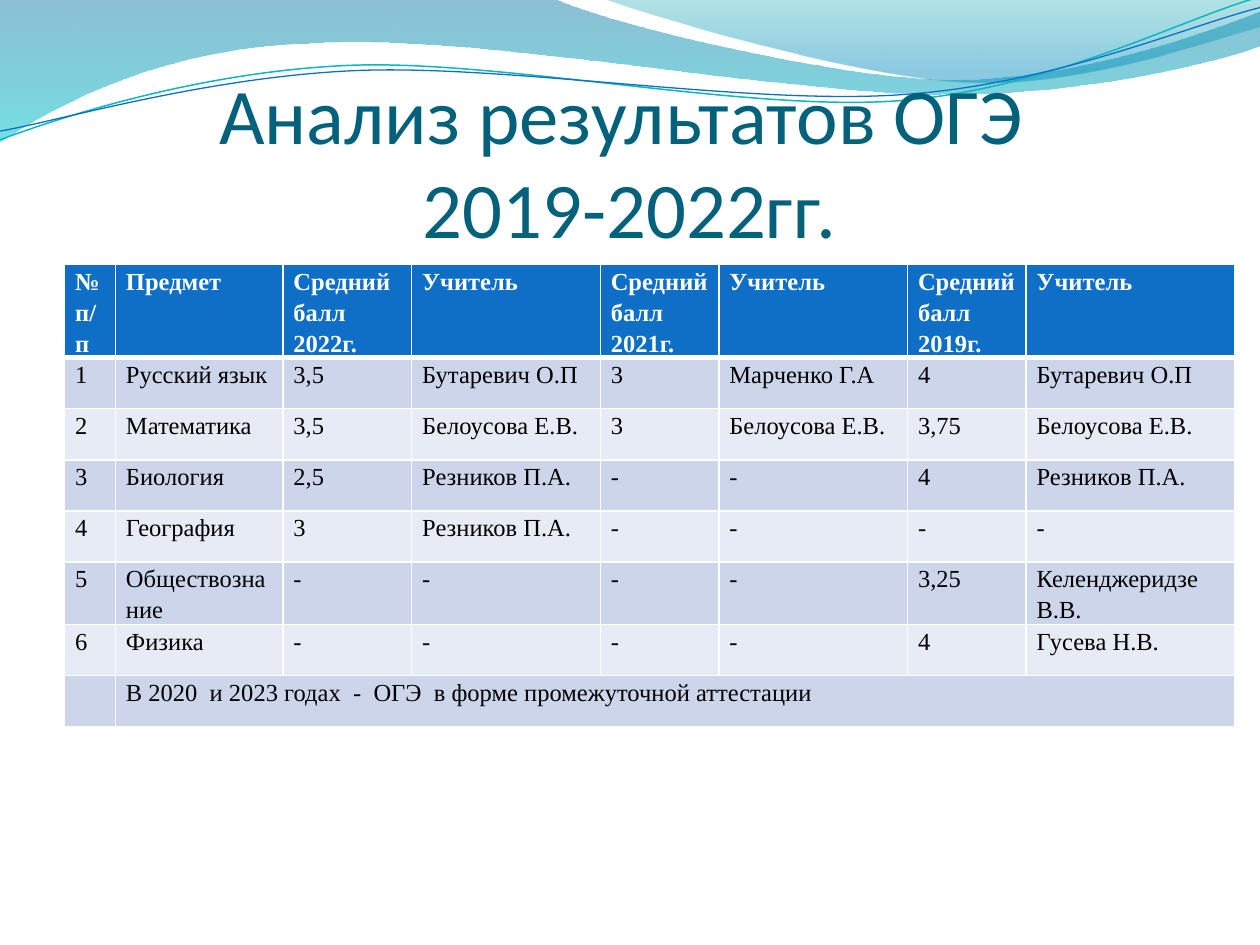
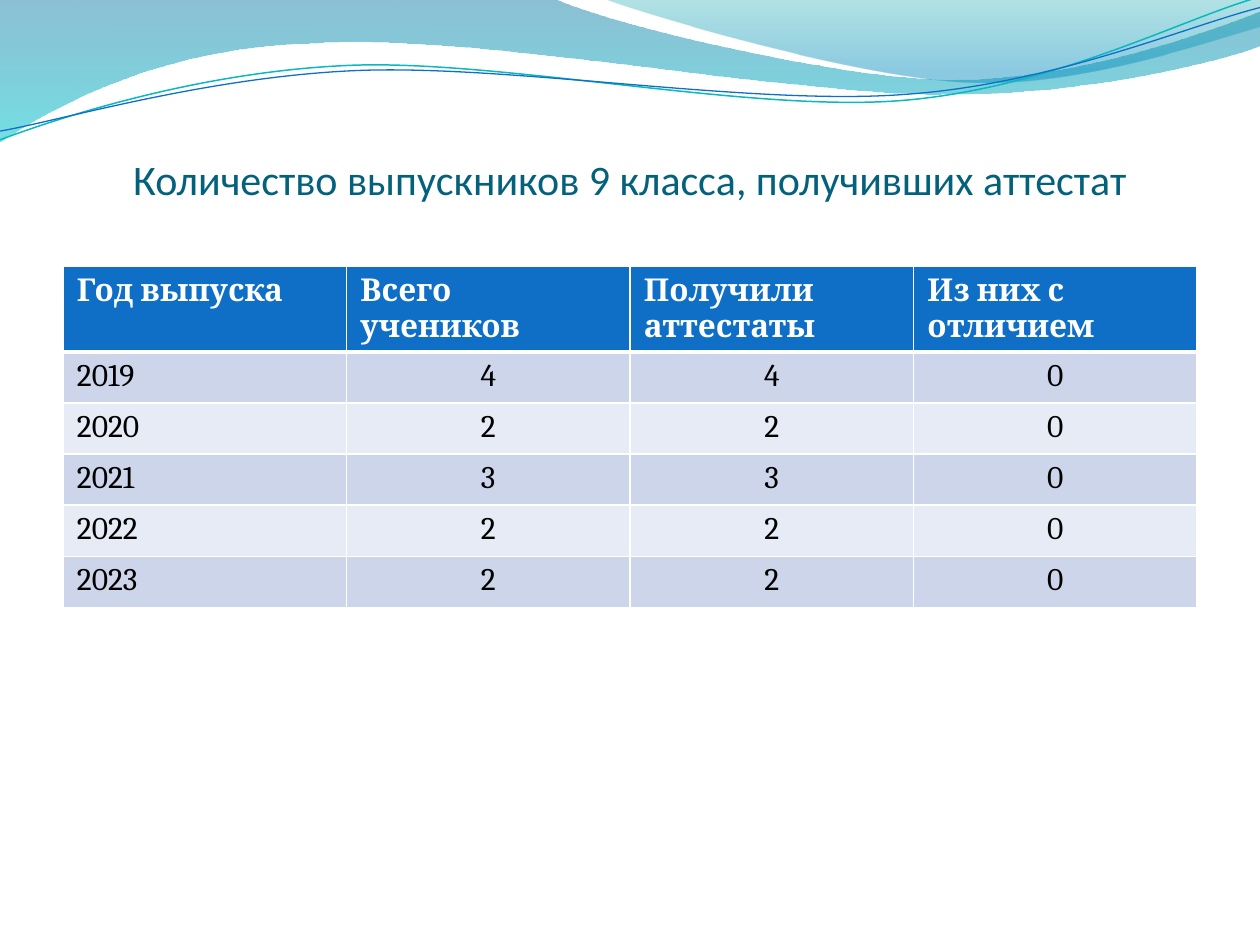
from dataclasses import dataclass

from lxml import etree
from pptx import Presentation
from pptx.dml.color import RGBColor
from pptx.enum.text import MSO_ANCHOR, MSO_AUTO_SIZE, PP_ALIGN
from pptx.oxml.ns import qn
from pptx.util import Pt

BOTTOM = MSO_ANCHOR.BOTTOM
NO_AUTOFIT = MSO_AUTO_SIZE.NONE
LEFT, CENTER = PP_ALIGN.LEFT, PP_ALIGN.CENTER

WHITE, BLACK, BLUE, TITLE_TEAL = "FFFFFF", "000000", "0F6FC6", "04617B"
BANDS = ("CCD5EA", "E7EBF5")
ROW_HEIGHT = 29.2

Point = tuple[float, float]


@dataclass(frozen=True)
class Stop:
    position: float
    colour: str
    opacity: int  # percent


@dataclass(frozen=True)
class Outline:
    """A start point, then segments of one point (line) or three (cubic curve)."""
    start: Point
    segments: tuple[tuple[Point, ...], ...]


@dataclass(frozen=True)
class Wave:
    outline: Outline
    stops: tuple[Stop, Stop]


@dataclass(frozen=True)
class Stroke:
    outline: Outline
    colour: str
    width: float


@dataclass(frozen=True)
class Title:
    text: str
    size: float
    bottom_inset: float = 0


@dataclass(frozen=True)
class Grid:
    left: float
    top: float
    widths: tuple[float, ...]
    rows: tuple[tuple[str, ...], ...]
    font: str
    size: float
    inset_x: float
    inset_y: float
    line_spacing: float | None = None
    value_align: PP_ALIGN = LEFT


WAVES = (
    Wave(
        Outline((0, 0), (
            ((316.8, -0.7),),
            ((342.7, 12.2), (478.1, 45.4), (545.8, 45.4)),
            ((614.2, 45.4), (689.8, 18.7), (720, 6.5)),
            ((720.7, 25.9),),
            ((707.8, 31.7), (626.4, 54.7), (537.1, 54)),
            ((447.8, 54), (275, 20.2), (185, 24.5)),
            ((92.9, 25.9), (33.1, 59.8), (-0.7, 81.4)),
            ((0, 0),),
        )),
        (Stop(0, "0074A1", 45), Stop(1, "00C6CF", 55)),
    ),
    Wave(
        Outline((344.9, -0.7), (
            ((366.5, 7.9), (491, 44.6), (553.7, 46.8)),
            ((616.3, 49.7), (691.9, 23), (720, 15.1)),
            ((720, 0),),
            ((344.9, -0.7),),
        )),
        (Stop(0, "00A1A9", 30), Stop(0.8, "008BBF", 45)),
    ),
)

STROKES = (
    Stroke(
        Outline((0, 79.9), (
            ((34.6, 67), (113.8, 41), (199.4, 37.4)),
            ((284.4, 33.8), (427, 64.1), (513.4, 57.6)),
            ((599.8, 51.1), (675.4, 10.8), (718.6, -1.4)),
        )),
        "0AB8BF", 0.85,
    ),
    Stroke(
        Outline((0, 74.9), (
            ((33.8, 69.1), (118.1, 43.9), (203.8, 40.3)),
            ((290.2, 36.7), (429.8, 60.5), (516.2, 54)),
            ((601.9, 48.2), (677.5, 15.1), (720, 4.3)),
        )),
        BLUE, 0.75,
    ),
)

EXAM_TITLE = Title("Анализ результатов ОГЭ \v2019-2022гг.", 45)
EXAM_GRID = Grid(
    left=37, top=151,
    widths=(29, 95.7, 73.6, 107.8, 67.8, 107.8, 67.8, 119),
    rows=(
        ("№\nп/п", "Предмет", "Средний балл\n2022г.", "Учитель",
         "Средний балл\n2021г.", "Учитель", "Средний балл\n2019г.", "Учитель"),
        ("1", "Русский язык", "3,5", "Бутаревич О.П", "3", "Марченко Г.А", "4", "Бутаревич О.П"),
        ("2", "Математика", "3,5", "Белоусова Е.В.", "3", "Белоусова Е.В.", "3,75",
         "Белоусова Е.В."),
        ("3", "Биология", "2,5", "Резников П.А.", "-", "-", "4", "Резников П.А."),
        ("4", "География", "3", "Резников П.А.", "-", "-", "-", "-"),
        ("5", "Обществознание", "-", "-", "-", "-", "3,25", "Келенджеридзе В.В."),
        ("6", "Физика", "-", "-", "-", "-", "4", "Гусева Н.В."),
        ("", "В 2020  и 2023 годах  -  ОГЭ  в форме промежуточной аттестации"),
    ),
    font="Times New Roman", size=14, inset_x=6, inset_y=0, line_spacing=1.15,
)

GRADUATES_TITLE = Title("Количество выпускников 9 класса, получивших аттестат", 24, 29)
GRADUATES_GRID = Grid(
    left=36, top=152.3, widths=(162,) * 4,
    rows=(
        ("Год выпуска", "Всего учеников", "Получили аттестаты", "Из них с отличием"),
        ("2019", "4", "4", "0"),
        ("2020", "2", "2", "0"),
        ("2021", "3", "3", "0"),
        ("2022", "2", "2", "0"),
        ("2023", "2", "2", "0"),
    ),
    font="Cambria", size=18, inset_x=8, inset_y=3.6, value_align=CENTER,
)


def rgb(colour: str) -> RGBColor:
    return RGBColor.from_string(colour)


def bend_segments(shape, outline: Outline) -> None:
    """Turn each run of three line segments that stands for a curve into that curve."""
    line_steps = iter(list(shape._element.iter(qn("a:lnTo"))))
    for segment in outline.segments:
        steps = [next(line_steps) for _ in segment]
        if len(segment) == 3:
            curve = etree.Element(qn("a:cubicBezTo"))
            steps[0].addprevious(curve)
            for step in steps:
                curve.append(step[0])
                step.getparent().remove(step)


def add_outline(page, outline: Outline, close: bool):
    points = [outline.start, *(point for segment in outline.segments for point in segment)]
    first, *others = [(Pt(x), Pt(y)) for x, y in points]
    builder = page.shapes.build_freeform(*first)
    builder.add_line_segments(others, close=close)
    shape = builder.convert_to_shape()
    bend_segments(shape, outline)
    shape.shadow.inherit = False
    return shape


def add_wave(page, wave: Wave) -> None:
    shape = add_outline(page, wave.outline, close=True)
    shape.line.fill.background()
    shape.fill.gradient()
    shape.fill.gradient_angle = 270
    for gradient_stop, stop in zip(shape.fill.gradient_stops, wave.stops):
        gradient_stop.position = stop.position
        gradient_stop.color.rgb = rgb(stop.colour)
    for colour, stop in zip(shape._element.spPr.iter(qn("a:srgbClr")), wave.stops):
        etree.SubElement(colour, qn("a:alpha"), val=str(stop.opacity * 1000))


def add_stroke(page, stroke: Stroke) -> None:
    shape = add_outline(page, stroke.outline, close=False)
    shape.fill.background()
    shape.line.color.rgb = rgb(stroke.colour)
    shape.line.width = Pt(stroke.width)


def add_title(page, title: Title) -> None:
    box = page.shapes.add_textbox(Pt(36), Pt(55.4), Pt(648), Pt(90))
    frame = box.text_frame
    frame.word_wrap = True
    frame.auto_size = NO_AUTOFIT
    frame.vertical_anchor = BOTTOM
    frame.margin_left = frame.margin_right = 0
    frame.margin_top = Pt(3.6)
    frame.margin_bottom = Pt(title.bottom_inset)
    para = frame.paragraphs[0]
    para.text = title.text
    para.alignment = CENTER
    para.font.name = "Calibri"
    para.font.size = Pt(title.size)
    para.font.color.rgb = rgb(TITLE_TEAL)


def set_borders(cell, top: float, bottom: float) -> None:
    """White borders; call before the cell is filled, as the schema orders them."""
    properties = cell._tc.get_or_add_tcPr()
    for side, width in (("L", 1), ("R", 1), ("T", top), ("B", bottom)):
        line = etree.SubElement(properties, qn(f"a:ln{side}"), w=str(Pt(width)))
        fill = etree.SubElement(line, qn("a:solidFill"))
        etree.SubElement(fill, qn("a:srgbClr"), val=WHITE)


def style_cell(cell, grid: Grid, row: int, column: int) -> None:
    header = row == 0
    set_borders(cell, top=3 if row == 1 else 1, bottom=3 if header else 1)
    cell.fill.solid()
    cell.fill.fore_color.rgb = rgb(BLUE if header else BANDS[(row - 1) % 2])
    cell.margin_left = cell.margin_right = Pt(grid.inset_x)
    cell.margin_top = cell.margin_bottom = Pt(grid.inset_y)
    for para in cell.text_frame.paragraphs:
        para.alignment = LEFT if header or column == 0 else grid.value_align
        para.line_spacing = grid.line_spacing
        para.font.name = grid.font
        para.font.size = Pt(grid.size)
        para.font.bold = header
        para.font.color.rgb = rgb(WHITE if header else BLACK)


def add_grid(page, grid: Grid) -> None:
    row_count, column_count = len(grid.rows), len(grid.widths)
    table = page.shapes.add_table(
        row_count, column_count, Pt(grid.left), Pt(grid.top),
        Pt(sum(grid.widths)), Pt(ROW_HEIGHT * row_count),
    ).table
    for column, width in zip(table.columns, grid.widths):
        column.width = Pt(width)
    for row, texts in enumerate(grid.rows):
        table.rows[row].height = Pt(ROW_HEIGHT)
        for column, text in enumerate(texts):
            table.cell(row, column).text = text
        for column in range(column_count):
            style_cell(table.cell(row, column), grid, row, column)
        if len(texts) < column_count:
            table.cell(row, len(texts) - 1).merge(table.cell(row, column_count - 1))


def add_page(deck, title: Title, grid: Grid) -> None:
    page = deck.slides.add_slide(deck.slide_layouts[6])
    for wave in WAVES:
        add_wave(page, wave)
    for stroke in STROKES:
        add_stroke(page, stroke)
    add_title(page, title)
    add_grid(page, grid)


def main() -> None:
    deck = Presentation()
    deck.slide_width, deck.slide_height = Pt(720), Pt(540)
    add_page(deck, EXAM_TITLE, EXAM_GRID)
    add_page(deck, GRADUATES_TITLE, GRADUATES_GRID)
    deck.save("out.pptx")


if __name__ == "__main__":
    main()
